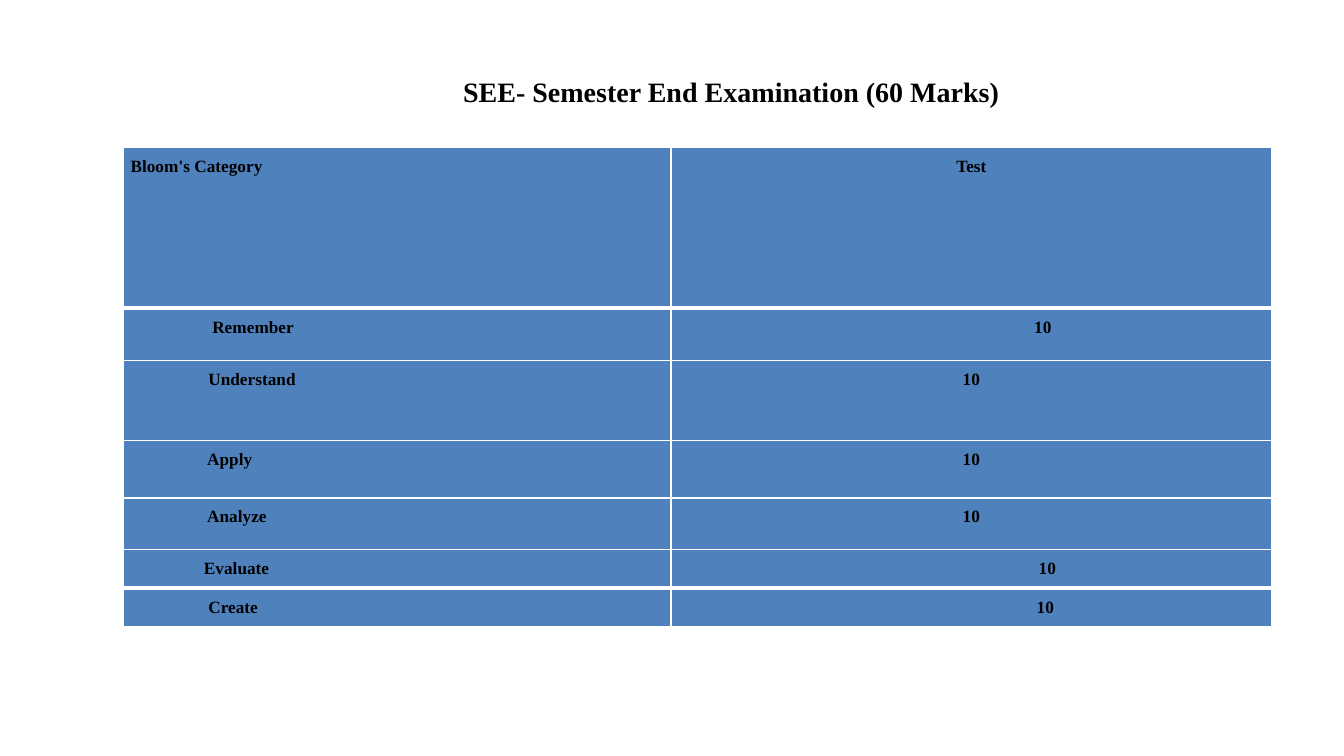
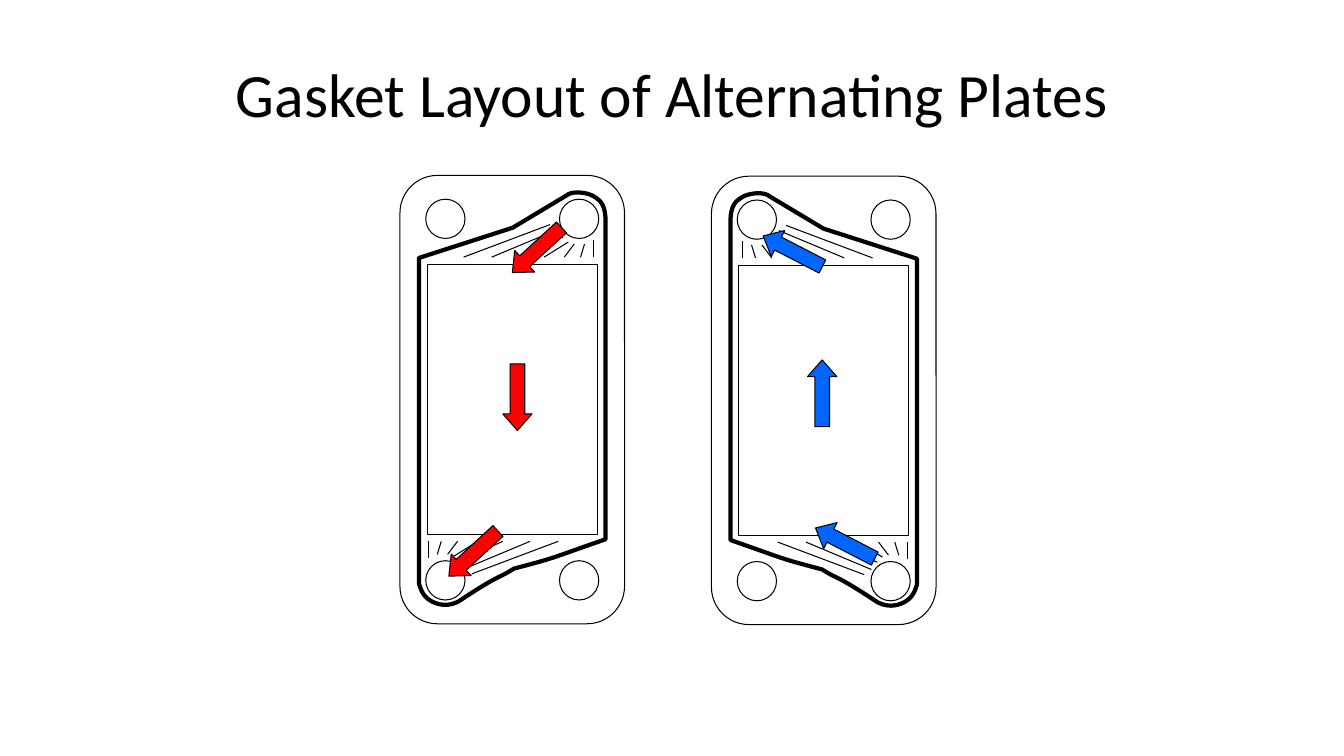
"""Build two slides: an examination marks table and a gasket layout diagram."""
from dataclasses import dataclass

from lxml.etree import SubElement
from pptx import Presentation
from pptx.dml.color import RGBColor
from pptx.enum.shapes import MSO_CONNECTOR, MSO_SHAPE
from pptx.enum.text import MSO_ANCHOR, PP_ALIGN
from pptx.oxml import parse_xml
from pptx.oxml.ns import nsdecls, qn
from pptx.util import Cm, Pt


@dataclass(frozen=True)
class Theme:
    """Colours, fonts and sizes shared by the slides."""
    ink: str = "000000"
    paper: str = "FFFFFF"
    cell: str = "4F81BD"
    hot: str = "FF0000"
    cold: str = "0066FF"
    serif: str = "Times New Roman"
    sans: str = "Calibri"
    body_size: float = 12.3
    heading_size: float = 20
    title_size: float = 44
    thin: float = 0.75
    gasket: float = 3
    rule: float = 1
    heavy_rule: float = 3


THEME = Theme()

MARKS = [
    ("Bloom's Category", 0.17, "Test", 0, 4.06),
    ("Remember", 2.23, "10", 3.6, 1.32),
    ("Understand", 2.13, "10", 0, 2.01),
    ("Apply", 2.1, "10", 0, 1.45),
    ("Analyze", 2.1, "10", 0, 1.3),
    ("Evaluate", 2.02, "10", 3.83, 0.97),
    ("Create", 2.13, "10", 3.73, 0.97),
]
HEAVY_EDGES = (1, 6)

PLATE_W, PLATE_H = 5.66, 11.3
PORT, PORT_X, PORT_Y = 0.99, 0.65, 0.6
FIELD_X, FIELD_Y = 0.69, 2.24
FLOW_W, FLOW_H = 0.74, 1.68

GASKET_START = (0.48, 10.29)
GASKET = [
    [(0.48, 2.08)],
    [(2.84, 1.32)],
    [(4.19, 0.51)],
    [(4.34, 0.38), (4.7, 0.43), (4.85, 0.51)],
    [(5.03, 0.61), (5.16, 0.71), (5.18, 1.07)],
    [(5.18, 9.17)],
    [(3.71, 9.68), (4.04, 9.6), (2.87, 9.91)],
    [(2.49, 10.16), (2.57, 10.01), (1.47, 10.74)],
    [(1.24, 10.85), (1.04, 10.85), (0.81, 10.74)],
    [(0.58, 10.62), (0.53, 10.44), GASKET_START],
]

RIDGE_Y = 2.06
RIDGES = [
    (1.6, 3.78, 1.24), (2.31, 3.96, 1.37), (3, 4.11, 1.55), (3.63, 4.24, 1.68),
    (4.14, 4.39, 1.73), (4.55, 4.65, 1.73), (4.88, 4.88, 1.63),
]
RIDGE_TURN = (5.59, 11.28)

HOT_FLOW = [(12.67, 9.17, 0), (13.16, 5.46, 47.4), (11.56, 13.11, 47.4)]
COLD_FLOW = [(20.35, 9.07, 0), (20.93, 12.85, 297.3), (19.61, 5.49, 297.3)]


def rgb(color):
    """Turn a hex string into a colour."""
    return RGBColor.from_string(color)


def write(tf, text, font, size, bold=False, align=PP_ALIGN.LEFT):
    """Put one formatted paragraph in a text frame and return it."""
    tf.text = text
    p = tf.paragraphs[0]
    p.alignment = align
    f = p.runs[0].font
    f.name, f.size, f.bold = font, Pt(size), bold
    f.color.rgb = rgb(THEME.ink)
    return p


def add_title(s, text, box, insets, **style):
    """Add a vertically centred title."""
    tf = s.shapes.add_textbox(*map(Cm, box)).text_frame
    tf.word_wrap = True
    tf.vertical_anchor = MSO_ANCHOR.MIDDLE
    tf.margin_left, tf.margin_top, tf.margin_right, tf.margin_bottom = map(Cm, insets)
    write(tf, text, **style)


def set_borders(cell, widths):
    """Draw the left, right, top and bottom borders of a cell."""
    tc_pr = cell._tc.get_or_add_tcPr()
    for i, (side, width) in enumerate(zip("LRTB", widths)):
        tc_pr.insert(i, parse_xml(
            f'<a:ln{side} {nsdecls("a")} w="{Pt(width)}"><a:solidFill>'
            f'<a:srgbClr val="{THEME.paper}"/></a:solidFill></a:ln{side}>'))


def fill_cell(cell, text, indent, align, widths):
    """Write and style one table cell."""
    cell.margin_left = Cm(indent)
    cell.margin_right = cell.margin_top = cell.margin_bottom = 0
    p = write(cell.text_frame, text, THEME.serif, THEME.body_size, True, align)
    p.line_spacing = 1.5
    cell.fill.solid()
    cell.fill.fore_color.rgb = rgb(THEME.cell)
    set_borders(cell, widths)


def add_marks_table(s):
    """Add the table of marks per category."""
    height = sum(row[-1] for row in MARKS)
    frame = s.shapes.add_table(len(MARKS), 2, Cm(3.12), Cm(3.71), Cm(28.93), Cm(height))
    table = frame.table
    table.first_row = table.horz_banding = False
    for col, width in zip(table.columns, (13.79, 15.14)):
        col.width = Cm(width)
    for i, (name, name_indent, mark, mark_indent, row_h) in enumerate(MARKS):
        table.rows[i].height = Cm(row_h)
        top, bottom = (THEME.heavy_rule if edge in HEAVY_EDGES else THEME.rule
                       for edge in (i, i + 1))
        widths = (THEME.rule, THEME.rule, top, bottom)
        fill_cell(table.cell(i, 0), name, name_indent, PP_ALIGN.LEFT, widths)
        fill_cell(table.cell(i, 1), mark, mark_indent, PP_ALIGN.CENTER, widths)


def style_shape(sp, fill=None, width=THEME.thin):
    """Give a shape its outline and optional fill."""
    sp.shadow.inherit = False
    sp.line.color.rgb = rgb(THEME.ink)
    sp.line.width = Pt(width)
    if fill:
        sp.fill.solid()
        sp.fill.fore_color.rgb = rgb(fill)
    else:
        sp.fill.background()


def add_outline(shapes, kind, x, y, w, h):
    """Add an unfilled preset shape."""
    sp = shapes.add_shape(kind, Cm(x), Cm(y), Cm(w), Cm(h))
    style_shape(sp)
    return sp


def add_ridge(shapes, start, end):
    """Add one thin ridge line."""
    line = shapes.add_connector(MSO_CONNECTOR.STRAIGHT, *map(Cm, start + end))
    line.line.color.rgb = rgb(THEME.ink)
    line.line.width = Pt(THEME.thin)
    SubElement(line._element.spPr, qn("a:effectLst"))


def bezier(p0, p1, p2, p3, steps=10):
    """Sample a cubic curve after its first point."""
    for t in (i / steps for i in range(1, steps + 1)):
        u = 1 - t
        yield tuple(u**3 * a + 3 * u * u * t * b + 3 * u * t * t * c + t**3 * d
                    for a, b, c, d in zip(p0, p1, p2, p3))


def gasket_points():
    """List the points along the gasket after its start."""
    points = [GASKET_START]
    for step in GASKET:
        points += step if len(step) == 1 else bezier(points[-1], *step)
    return points[1:]


def add_plate(s, left, top, mirrored=False):
    """Add a grouped plate with ports, field, gasket and ridges."""
    shapes = s.shapes.add_group_shape().shapes

    def place(x, y):
        """Map a point on the plate to the slide."""
        return left + (PLATE_W - x if mirrored else x), top + y

    body = add_outline(shapes, MSO_SHAPE.ROUNDED_RECTANGLE, left, top, PLATE_W, PLATE_H)
    body.adjustments[0] = 0.167
    for y in (PORT_Y, PLATE_H - PORT_Y - PORT):
        for x in (PORT_X, PLATE_W - PORT_X - PORT):
            add_outline(shapes, MSO_SHAPE.OVAL, left + x, top + y, PORT, PORT)
    add_outline(shapes, MSO_SHAPE.RECTANGLE, left + FIELD_X, top + FIELD_Y,
                PLATE_W - 2 * FIELD_X, PLATE_H - 2 * FIELD_Y)

    builder = shapes.build_freeform(*map(Cm, place(*GASKET_START)))
    builder.add_line_segments([tuple(map(Cm, place(*pt))) for pt in gasket_points()])
    style_shape(builder.convert_to_shape(), width=THEME.gasket)

    turn_x, turn_y = RIDGE_TURN
    for x1, x2, y2 in RIDGES:
        add_ridge(shapes, place(x1, RIDGE_Y), place(x2, y2))
        add_ridge(shapes, place(turn_x - x1, turn_y - RIDGE_Y),
                  place(turn_x - x2, turn_y - y2))


def add_flow(s, kind, color, arrows):
    """Add the block arrows of one stream."""
    for x, y, angle in arrows:
        sp = s.shapes.add_shape(kind, Cm(x), Cm(y), Cm(FLOW_W), Cm(FLOW_H))
        sp.adjustments[0], sp.adjustments[1] = 0.5, 0.57
        sp.rotation = angle
        style_shape(sp, color)


def build_marks_slide(s):
    """Fill the examination slide."""
    add_marks_table(s)
    add_title(s, "SEE- Semester End Examination (60 Marks)",
              (9.83, 1.09, 17.78, 2.26), (1.84, 0.2, 0, 0.05),
              font=THEME.serif, size=THEME.heading_size, bold=True)


def build_gasket_slide(s):
    """Fill the gasket layout slide."""
    add_title(s, "Gasket Layout of Alternating Plates",
              (1.7, 0.76, 30.48, 3.18), (0.25, 0.13, 0.25, 0.13),
              font=THEME.sans, size=THEME.title_size, align=PP_ALIGN.CENTER)
    add_plate(s, 10.08, 4.42)
    add_plate(s, 17.93, 4.44, mirrored=True)
    add_flow(s, MSO_SHAPE.DOWN_ARROW, THEME.hot, HOT_FLOW)
    add_flow(s, MSO_SHAPE.UP_ARROW, THEME.cold, COLD_FLOW)


def main():
    """Build and save the presentation."""
    prs = Presentation()
    prs.slide_width, prs.slide_height = Cm(33.87), Cm(19.05)
    for build in (build_marks_slide, build_gasket_slide):
        build(prs.slides.add_slide(prs.slide_layouts[6]))
    prs.save("out.pptx")


if __name__ == "__main__":
    main()
